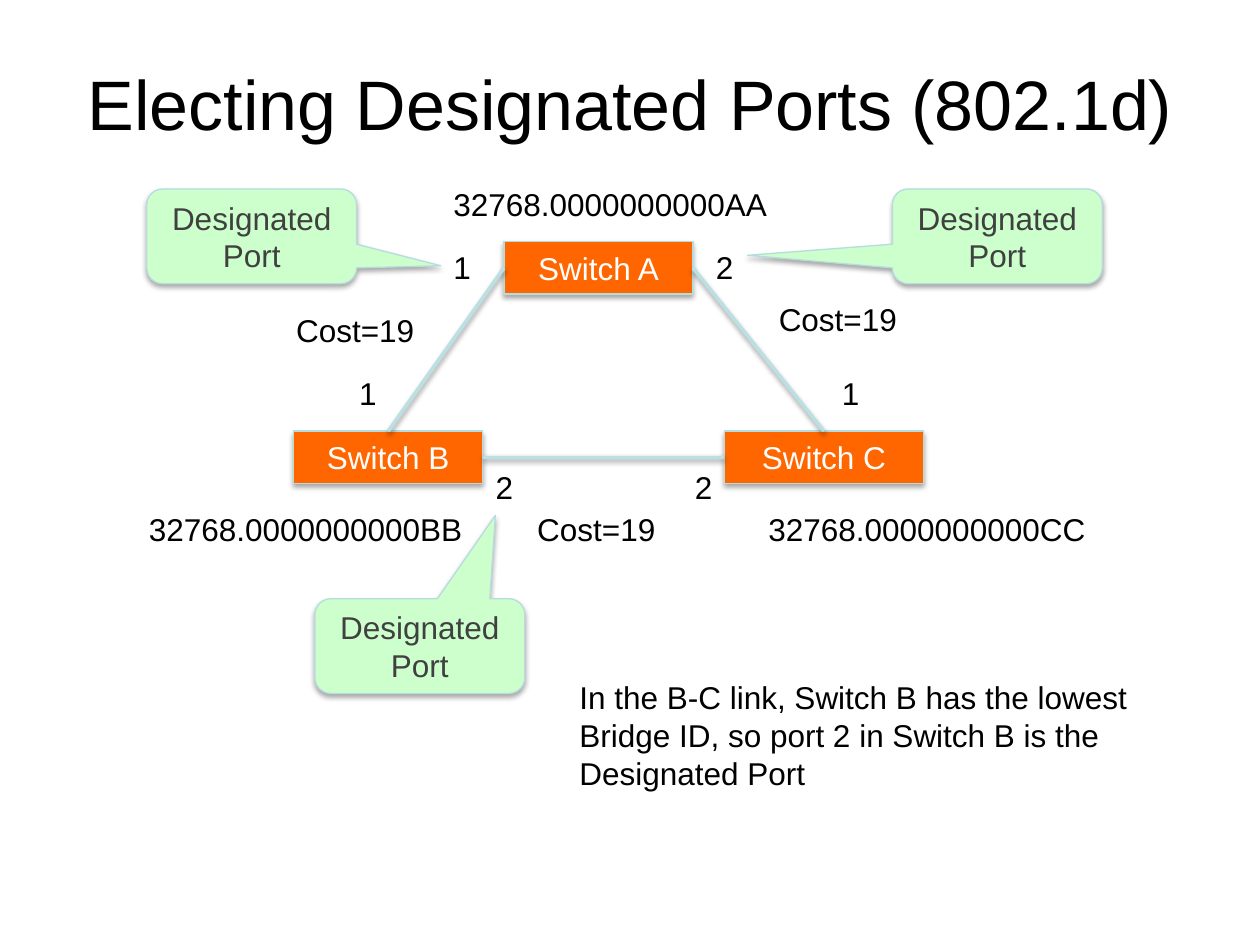
from dataclasses import dataclass
from lxml import etree
from pptx import Presentation
from pptx.dml.color import RGBColor as Rgb
from pptx.enum.shapes import MSO_CONNECTOR as Link, MSO_SHAPE as Kind
from pptx.enum.text import MSO_ANCHOR as Anchor, MSO_AUTO_SIZE as Fit, PP_ALIGN as Align
from pptx.oxml.ns import qn
from pptx.util import Cm, Pt


@dataclass(frozen=True)
class Theme:
    font: str = "Arial"
    head: int = 40
    body: int = 18
    ink: str = "000000"
    box: str = "FF6600"
    light: str = "FFFFFF"
    note: str = "CCFFCC"
    grey: str = "404040"
    edge: str = "B6DCDF"
    wire: str = "BBE0E3"


theme = Theme()


def write(shape, text, size, color, align):
    frame = shape.text_frame
    frame.text = text
    para = frame.paragraphs[0]
    para.alignment = align
    font = para.runs[0].font
    font.name, font.size = theme.font, Pt(size)
    font.color.rgb = Rgb.from_string(color)
    return frame


def style(shape, color, width, alpha, drop):
    shape.line.color.rgb = Rgb.from_string(color)
    shape.line.width = Pt(width)
    props = shape._element.spPr
    for old in props.findall(qn("a:effectLst")):
        props.remove(old)
    effect = etree.SubElement(props, qn("a:effectLst"))
    shade = etree.SubElement(effect, qn("a:outerShdw"), blurRad=str(Pt(3.1)),
                             dist=str(Pt(drop)), dir="5400000", rotWithShape="0")
    black = etree.SubElement(shade, qn("a:srgbClr"), val="000000")
    etree.SubElement(black, qn("a:alpha"), val=str(alpha * 1000))


deck = Presentation()
deck.slide_width, deck.slide_height = Cm(25.4), Cm(19.05)
slide = deck.slides.add_slide(deck.slide_layouts[5])
shapes = slide.shapes

title = shapes.title
title.left, title.top, title.width, title.height = Cm(1.27), Cm(0.76), Cm(22.86), Cm(2.62)
frame = write(title, "Electing Designated Ports (802.1d)", theme.head, theme.ink, Align.CENTER)
frame.vertical_anchor = Anchor.MIDDLE
frame.auto_size = Fit.NONE

nodes = {}
for name, x, y, w in [("B", 5.92, 8.69, 3.81), ("C", 14.6, 8.69, 4.02), ("A", 10.16, 4.87, 3.81)]:
    node = shapes.add_shape(Kind.RECTANGLE, Cm(x), Cm(y), Cm(w), Cm(1.06))
    node.shadow.inherit = False
    node.fill.solid()
    node.fill.fore_color.rgb = Rgb.from_string(theme.box)
    style(node, theme.edge, 0.75, 35, 1.8)
    frame = write(node, f"Switch {name}", theme.body, theme.light, Align.CENTER)
    frame.vertical_anchor = Anchor.MIDDLE
    nodes[name] = node

for start, out, end, into in [("A", 1, "B", 0), ("A", 3, "C", 0), ("B", 3, "C", 1)]:
    wire = shapes.add_connector(Link.STRAIGHT, 0, 0, 0, 0)
    wire.begin_connect(nodes[start], out)
    wire.end_connect(nodes[end], into)
    style(wire, theme.wire, 2, 38, 1.6)

port, cost, bridge = 0.86, 2.92, 6.91
labels = [
    ("1", 8.89, 4.87, port), ("2", 14.18, 4.87, port),
    ("1", 6.99, 7.41, port), ("1", 16.72, 7.41, port),
    ("2", 9.74, 9.31, port), ("2", 13.76, 9.31, port),
    ("Cost=19", 5.72, 6.14, cost), ("Cost=19", 15.45, 5.93, cost), ("Cost=19", 10.58, 10.16, cost),
    ("32768.0000000000AA", 8.89, 3.6, bridge),
    ("32768.0000000000BB", 2.75, 10.16, bridge),
    ("32768.0000000000CC", 15.24, 10.16, bridge),
]
for text, x, y, w in labels:
    label = shapes.add_textbox(Cm(x), Cm(y), Cm(w), Cm(1.02))
    frame = write(label, text, theme.body, theme.ink, Align.LEFT)
    frame.word_wrap = False
    frame.auto_size = Fit.SHAPE_TO_FIT_TEXT

for x, y, dx, dy in [(17.99, 3.81, -1.19, 0.2), (2.96, 3.81, 0.9, 0.31), (6.35, 12.07, 0.36, -1.38)]:
    note = shapes.add_shape(Kind.ROUNDED_RECTANGULAR_CALLOUT, Cm(x), Cm(y), Cm(4.23), Cm(1.91))
    note.adjustments[0], note.adjustments[1] = dx, dy
    note.shadow.inherit = False
    note.fill.solid()
    note.fill.fore_color.rgb = Rgb.from_string(theme.note)
    style(note, theme.edge, 0.75, 35, 1.8)
    frame = write(note, "Designated Port", theme.body, theme.grey, Align.CENTER)
    frame.vertical_anchor = Anchor.MIDDLE
    frame.word_wrap = True

text = ("In the B-C link, Switch B has the lowest Bridge ID, "
        "so port 2 in Switch B is the Designated Port")
remark = shapes.add_textbox(Cm(11.43), Cm(13.55), Cm(12.7), Cm(2.57))
frame = write(remark, text, theme.body, theme.ink, Align.LEFT)
frame.word_wrap = True
frame.auto_size = Fit.SHAPE_TO_FIT_TEXT

deck.save("out.pptx")
